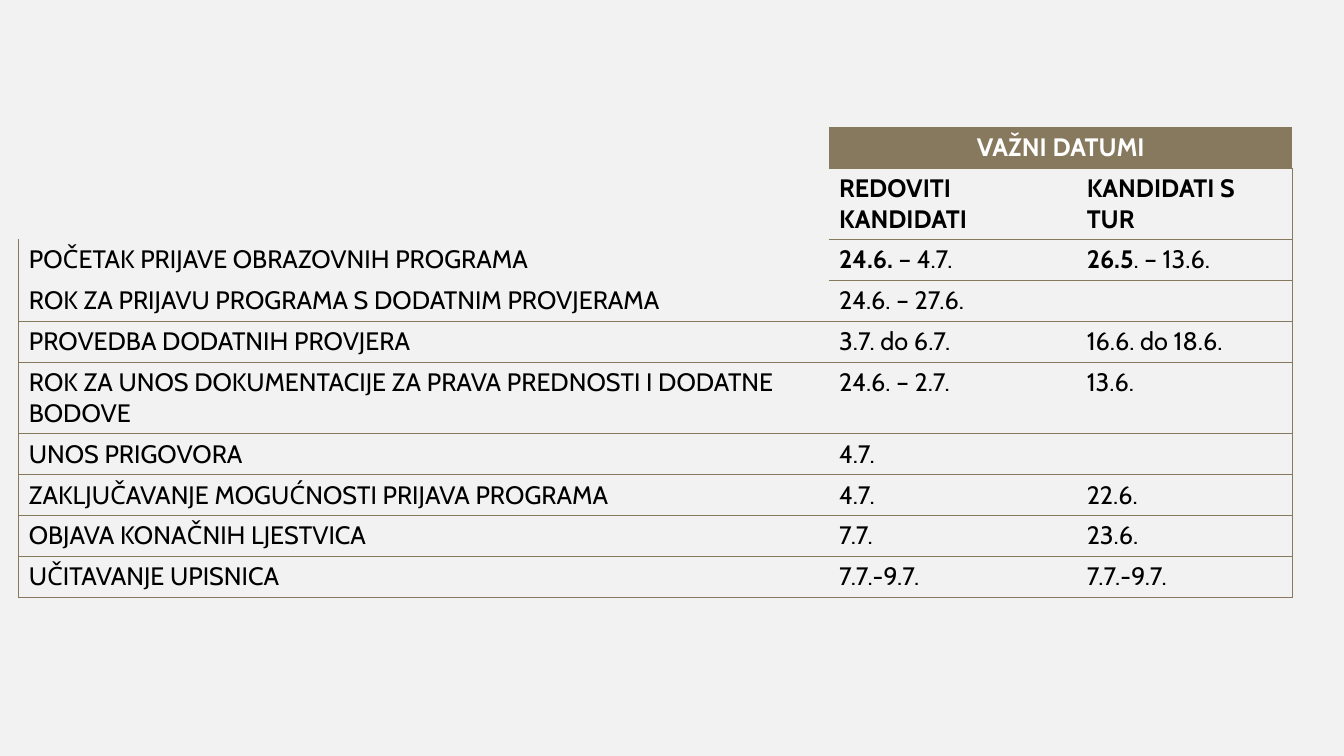
"""Build a slide with a table of important enrolment dates."""
from dataclasses import dataclass

from lxml.etree import SubElement
from pptx import Presentation
from pptx.dml.color import RGBColor
from pptx.enum.text import PP_ALIGN
from pptx.oxml.ns import qn
from pptx.table import Table, _Cell
from pptx.util import Pt

GOLD = "87795D"
BLACK = "000000"
WHITE = "FFFFFF"
PAPER = "F2F2F2"
WIDTHS = (578.8, 176.9, 154.1)
HEIGHT = 28.1


@dataclass(frozen=True)
class Span:
    """A run of text."""
    text: str
    bold: bool = False


@dataclass(frozen=True)
class Row:
    """One row of the table, each cell a tuple of runs."""
    label: tuple[Span, ...]
    main: tuple[Span, ...]
    tur: tuple[Span, ...]


def plain(label: str, main: str, tur: str) -> Row:
    """Make a row of regular text, leaving empty cells without runs."""
    return Row(*(((Span(text),) if text else ()) for text in (label, main, tur)))


ROWS = (
    Row((), (Span("VAŽNI DATUMI", True),), ()),
    Row((), (Span("REDOVITI KANDIDATI", True),), (Span("KANDIDATI S TUR", True),)),
    Row((Span("POČETAK PRIJAVE OBRAZOVNIH PROGRAMA"),),
        (Span("24.6.", True), Span(" – 4.7.")),
        (Span("26.5", True), Span(". – 13.6."))),
    plain("ROK ZA PRIJAVU PROGRAMA S DODATNIM PROVJERAMA", "24.6. – 27.6.", ""),
    plain("PROVEDBA DODATNIH PROVJERA", "3.7. do 6.7.", "16.6. do 18.6."),
    plain("ROK ZA UNOS DOKUMENTACIJE ZA PRAVA PREDNOSTI I DODATNE BODOVE",
          "24.6. – 2.7.", "13.6."),
    plain("UNOS PRIGOVORA", "4.7.", ""),
    plain("ZAKLJUČAVANJE MOGUĆNOSTI PRIJAVA PROGRAMA", "4.7.", "22.6."),
    plain("OBJAVA KONAČNIH LJESTVICA", "7.7.", "23.6."),
    plain("UČITAVANJE UPISNICA", "7.7.-9.7.", "7.7.-9.7."),
)


def color(code: str) -> RGBColor:
    """Turn a hex string into a colour."""
    return RGBColor.from_string(code)


def ruled(row: int, col: int) -> bool:
    """Tell whether a line runs below the cell."""
    return row > 2 or (row >= 0 and col > 0)


def border(cell: _Cell, row: int, col: int) -> None:
    """Draw the lines around a cell and clear the other sides."""
    sides = {
        "a:lnL": col == 0 and row > 1,
        "a:lnR": col == 2,
        "a:lnT": ruled(row - 1, col) or (row == 0 and col > 0),
        "a:lnB": ruled(row, col),
    }
    props = cell._tc.get_or_add_tcPr()
    for tag, shown in sides.items():
        line = SubElement(props, qn(tag), w=str(Pt(0.5)))
        fill = SubElement(line, qn("a:solidFill" if shown else "a:noFill"))
        if shown:
            SubElement(fill, qn("a:srgbClr"), val=GOLD)


def write(cell: _Cell, spans: tuple[Span, ...], ink: str) -> None:
    """Add the runs to a cell."""
    para = cell.text_frame.paragraphs[0]
    para.font.size = Pt(18)
    for span in spans:
        run = para.add_run()
        run.text = span.text
        run.font.name = "Cabin"
        run.font.size = Pt(18)
        run.font.bold = span.bold
        run.font.color.rgb = color(ink)


def fill(table: Table) -> None:
    """Format and fill every cell of the table."""
    for index, row in enumerate(ROWS):
        table.rows[index].height = Pt(HEIGHT)
        for col, spans in enumerate((row.label, row.main, row.tur)):
            cell = table.cell(index, col)
            head = index == 0 and col > 0
            border(cell, index, col)
            if head:
                cell.fill.solid()
                cell.fill.fore_color.rgb = color(GOLD)
                cell.text_frame.paragraphs[0].alignment = PP_ALIGN.CENTER
            else:
                cell.fill.background()
            write(cell, spans, WHITE if head else BLACK)


def main() -> None:
    """Create the deck and save it."""
    deck = Presentation()
    deck.slide_width, deck.slide_height = Pt(960), Pt(540)
    slide = deck.slides.add_slide(deck.slide_layouts[6])
    slide.background.fill.solid()
    slide.background.fill.fore_color.rgb = color(PAPER)
    frame = slide.shapes.add_table(len(ROWS), len(WIDTHS), Pt(13.4), Pt(90.7),
                                   Pt(sum(WIDTHS)), Pt(331.2))
    table = frame.table
    table.first_row = table.horz_banding = False
    for column, width in zip(table.columns, WIDTHS):
        column.width = Pt(width)
    fill(table)
    table.cell(0, 0).merge(table.cell(1, 0))
    table.cell(0, 1).merge(table.cell(0, 2))
    deck.save("out.pptx")


if __name__ == "__main__":
    main()
